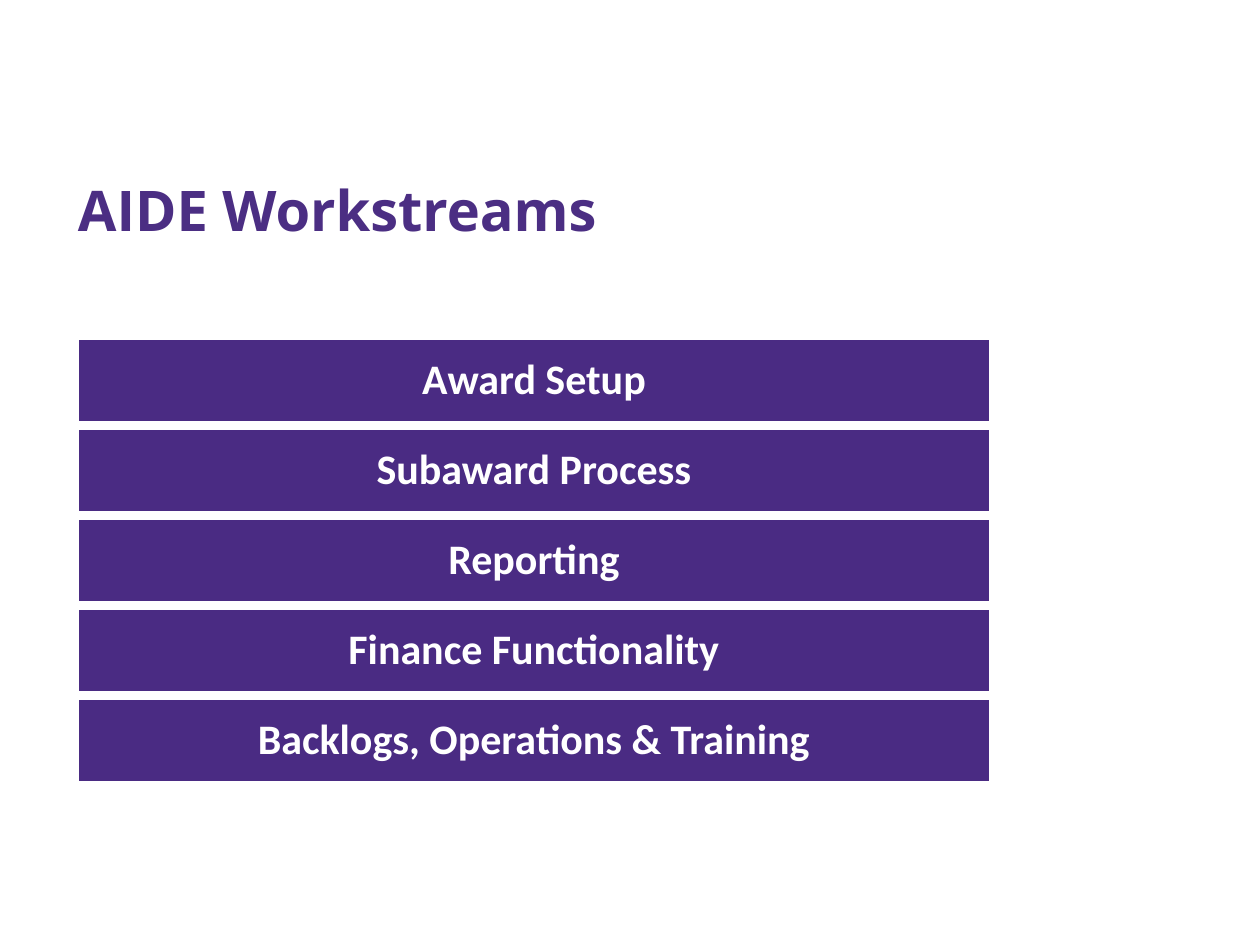
from dataclasses import dataclass

from pptx import Presentation, util as u
from pptx.dml.color import RGBColor
from pptx.enum import shapes, text

PX = 914400 / 168
COLORS = {"title": "4B2E83", "bar": "4A2B83", "white": "FFFFFF"}
BAR_LEFT, BAR_TOP, BAR_WIDTH, BAR_HEIGHT, BAR_PITCH = 77, 338, 914, 85, 90
WORKSTREAMS = [
    "Award Setup",
    "Subaward Process",
    "Reporting",
    "Finance Functionality",
    "Backlogs, Operations & Training",
]


@dataclass
class Bar:
    label: str
    top: int


def px(n: int) -> u.Emu:
    return u.Emu(round(n * PX))


def rgb(name: str) -> RGBColor:
    return RGBColor.from_string(COLORS[name])


def write(tf, content: str, *, font: str, size: int, color: str, align, anchor,
          margins: tuple[int, int], spacing: float = 1.0) -> None:
    """Fill a text frame with one bold paragraph; margins are (side, top and bottom)."""
    tf.word_wrap = True
    tf.auto_size = text.MSO_AUTO_SIZE.NONE
    tf.vertical_anchor = anchor
    tf.margin_left = tf.margin_right = px(margins[0])
    tf.margin_top = tf.margin_bottom = px(margins[1])
    p = tf.paragraphs[0]
    p.alignment = align
    p.line_spacing = spacing
    r = p.add_run()
    r.text = content
    r.font.name = font
    r.font.size = u.Pt(size)
    r.font.bold = True
    r.font.color.rgb = rgb(color)


def add_title(s, content: str) -> None:
    sp = s.shapes.title
    sp.left, sp.top, sp.width, sp.height = px(66), px(112), px(1129), px(137)
    write(sp.text_frame, content, font="Open Sans", size=24, color="title",
          align=text.PP_ALIGN.LEFT, anchor=text.MSO_ANCHOR.BOTTOM, margins=(12, 6))


def add_bar(group, bar: Bar) -> None:
    sp = group.shapes.add_shape(shapes.MSO_SHAPE.RECTANGLE, px(BAR_LEFT), px(bar.top),
                                px(BAR_WIDTH), px(BAR_HEIGHT))
    sp.shadow.inherit = False
    sp.fill.solid()
    sp.fill.fore_color.rgb = rgb("bar")
    sp.line.color.rgb = rgb("white")
    sp.line.width = u.Pt(2)
    write(sp.text_frame, bar.label, font="Calibri", size=18, color="white",
          align=text.PP_ALIGN.CENTER, anchor=text.MSO_ANCHOR.MIDDLE,
          margins=(8, 5), spacing=0.9)


def main() -> None:
    prs = Presentation()
    prs.slide_width, prs.slide_height = px(1260), px(945)
    s = prs.slides.add_slide(prs.slide_layouts[5])
    add_title(s, "AIDE Workstreams")
    group = s.shapes.add_group_shape()
    for i, label in enumerate(WORKSTREAMS):
        add_bar(group, Bar(label, BAR_TOP + i * BAR_PITCH))
    prs.save("out.pptx")


if __name__ == "__main__":
    main()
